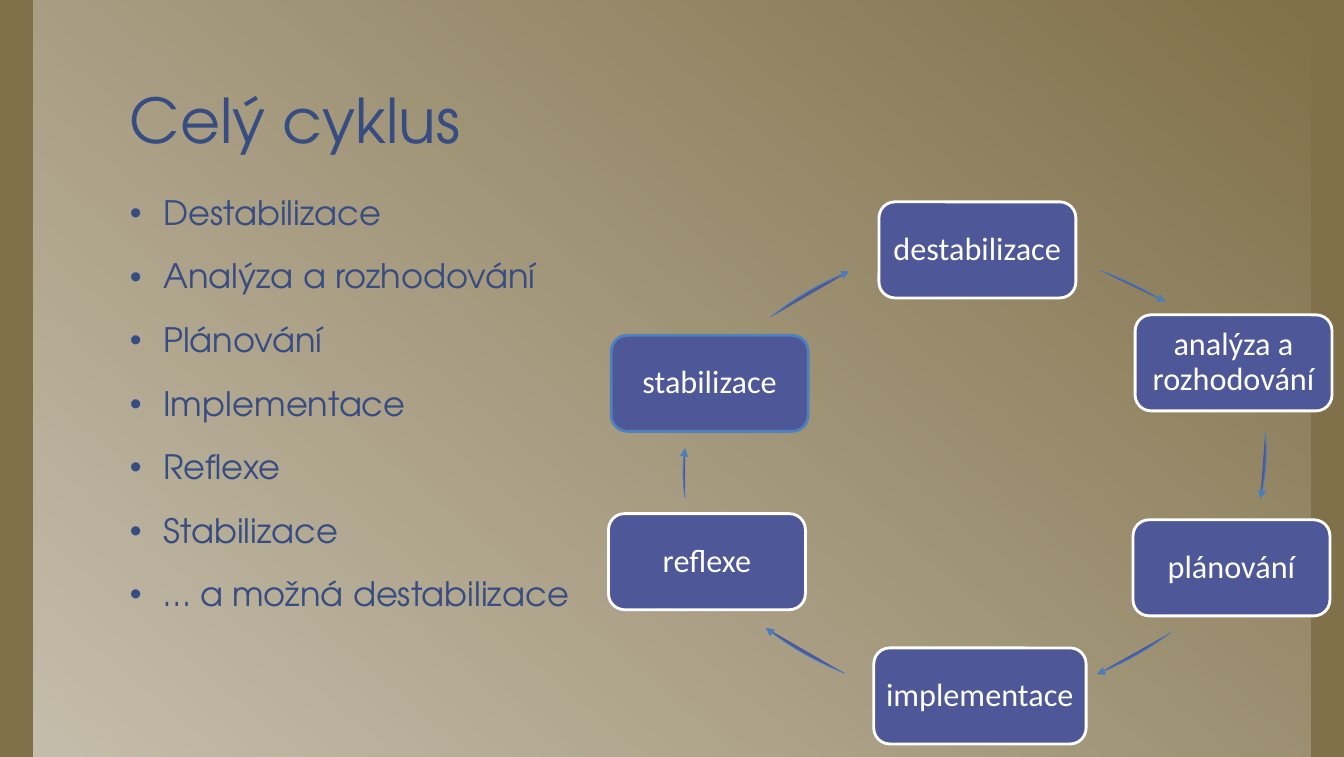
from lxml import etree
from pptx import Presentation
from pptx.dml.color import RGBColor
from pptx.enum.shapes import MSO_SHAPE
from pptx.enum.text import MSO_ANCHOR, PP_ALIGN
from pptx.oxml.ns import qn
from pptx.util import Pt

RECTANGLE = MSO_SHAPE.RECTANGLE
ROUNDED = MSO_SHAPE.ROUNDED_RECTANGLE
BOTTOM, MIDDLE = MSO_ANCHOR.BOTTOM, MSO_ANCHOR.MIDDLE
CENTER = PP_ALIGN.CENTER

THEME = {
    "background": RGBColor.from_string("81714A"),
    "ink": RGBColor.from_string("374C81"),
    "step": RGBColor.from_string("4E5798"),
    "accent": RGBColor.from_string("4F81BD"),
    "arrow": RGBColor.from_string("4A7EBB"),
    "white": RGBColor.from_string("FFFFFF"),
    "heading_font": "TeX Gyre Adventor",
    "step_font": "Calibri",
    "title_size": Pt(44),
    "list_size": Pt(24),
    "step_size": Pt(23),
}


def style_text(paragraph, font_name, size, color, spacing):
    paragraph.line_spacing = spacing
    paragraph.font.name = font_name
    paragraph.font.size = size
    paragraph.font.color.rgb = color


def curve_points(start, pull_out, pull_in, end, pieces=16):
    points = []
    for step in range(pieces + 1):
        t = step / pieces
        weights = ((1 - t) ** 3, 3 * t * (1 - t) ** 2, 3 * t * t * (1 - t), t ** 3)
        controls = (start, pull_out, pull_in, end)
        points.append(tuple(
            Pt(sum(w * c[axis] for w, c in zip(weights, controls))) for axis in (0, 1)
        ))
    return points


presentation = Presentation()
presentation.slide_width = Pt(959.04)
presentation.slide_height = Pt(540)
slide = presentation.slides.add_slide(presentation.slide_layouts[6])
slide.background.fill.solid()
slide.background.fill.fore_color.rgb = THEME["background"]

glow = slide.shapes.add_shape(RECTANGLE, Pt(23.8), Pt(0), Pt(911.5), Pt(540))
glow.shadow.inherit = False
glow.line.fill.background()
glow.fill.gradient()
glow.fill.gradient_angle = 230
for stop, position in zip(glow.fill.gradient_stops, (0, 1)):
    stop.color.rgb = THEME["white"]
    stop.position = position
for color, alpha in zip(glow._element.spPr.iter(qn("a:srgbClr")), (0, 55000)):
    etree.SubElement(color, qn("a:alpha")).set("val", str(alpha))

title = slide.shapes.add_textbox(Pt(87.8), Pt(5.8), Pt(800), Pt(110.2)).text_frame
phases = slide.shapes.add_textbox(Pt(87.8), Pt(133.9), Pt(391.7), Pt(352)).text_frame
for frame in (title, phases):
    frame.word_wrap = True
    frame.margin_left = frame.margin_right = Pt(5)
    frame.margin_top = frame.margin_bottom = Pt(5)

title.vertical_anchor = BOTTOM
title.text = "Celý cyklus"
style_text(title.paragraphs[0], THEME["heading_font"], THEME["title_size"], THEME["ink"], 0.85)

phases.text = "\n".join([
    "Destabilizace",
    "Analýza a rozhodování",
    "Plánování",
    "Implementace",
    "Reflexe",
    "Stabilizace",
    "… a možná destabilizace",
])
for index, phase in enumerate(phases.paragraphs):
    properties = phase._p.get_or_add_pPr()
    properties.set("marL", str(Pt(23.8)))
    properties.set("indent", str(-Pt(23.8)))
    etree.SubElement(properties, qn("a:buFont")).set("typeface", "Arial")
    etree.SubElement(properties, qn("a:buChar")).set("char", "•")
    if index:
        phase.space_before = Pt(18)
    style_text(phase, THEME["heading_font"], THEME["list_size"], THEME["ink"], 0.95)

STEP_HEIGHT = 68.5
cycle = [
    ("destabilizace", 627.2, 144, 140.5, "white",
     ((784.8, 193), (801.4, 198.7), (817.2, 206.6), (831.6, 215.3))),
    ("analýza a rozhodování", 810, 224.6, 140.5, "white",
     ((902.9, 308.2), (904.6, 325), (903.2, 341), (899.3, 355.7))),
    ("plánování", 808.5, 370.8, 140.5, "white",
     ((835.2, 451.4), (820.1, 463), (802.1, 473), (782.6, 481))),
    ("implementace", 623.5, 462.2, 151.5, "white",
     ((602.6, 480.2), (581.8, 471.6), (562.3, 460.8), (546.5, 447.8))),
    ("reflexe", 434.2, 366.4, 140.5, "white",
     ((488.9, 355), (487, 343.5), (487, 331.5), (488.9, 319.7))),
    ("stabilizace", 436.2, 239.2, 140.5, "accent",
     ((550.1, 226.1), (566.6, 213.1), (585.4, 201.6), (606.2, 193.7))),
]
for name, left, top, width, outline, curve in cycle:
    step = slide.shapes.add_shape(ROUNDED, Pt(left), Pt(top), Pt(width), Pt(STEP_HEIGHT))
    step.line.color.rgb = THEME[outline]
    step.line.width = Pt(2)
    label = step.text_frame
    label.word_wrap = True
    label.vertical_anchor = MIDDLE
    label.margin_left = label.margin_right = Pt(2)
    label.margin_top = label.margin_bottom = Pt(2)
    label.text = name
    label.paragraphs[0].alignment = CENTER
    style_text(label.paragraphs[0], THEME["step_font"], THEME["step_size"], THEME["white"], 0.9)

    points = curve_points(*curve)
    outline_builder = slide.shapes.build_freeform(*points[0])
    outline_builder.add_line_segments(points[1:], close=False)
    arrow = outline_builder.convert_to_shape()
    arrow.line.color.rgb = THEME["arrow"]
    arrow.line.width = Pt(0.75)
    arrow_line = arrow._element.spPr.find(qn("a:ln"))
    etree.SubElement(arrow_line, qn("a:tailEnd")).set("type", "triangle")

    for part in (step, arrow):
        part.shadow.inherit = False
        part.fill.solid()
        part.fill.fore_color.rgb = THEME["step"]

presentation.save("out.pptx")
